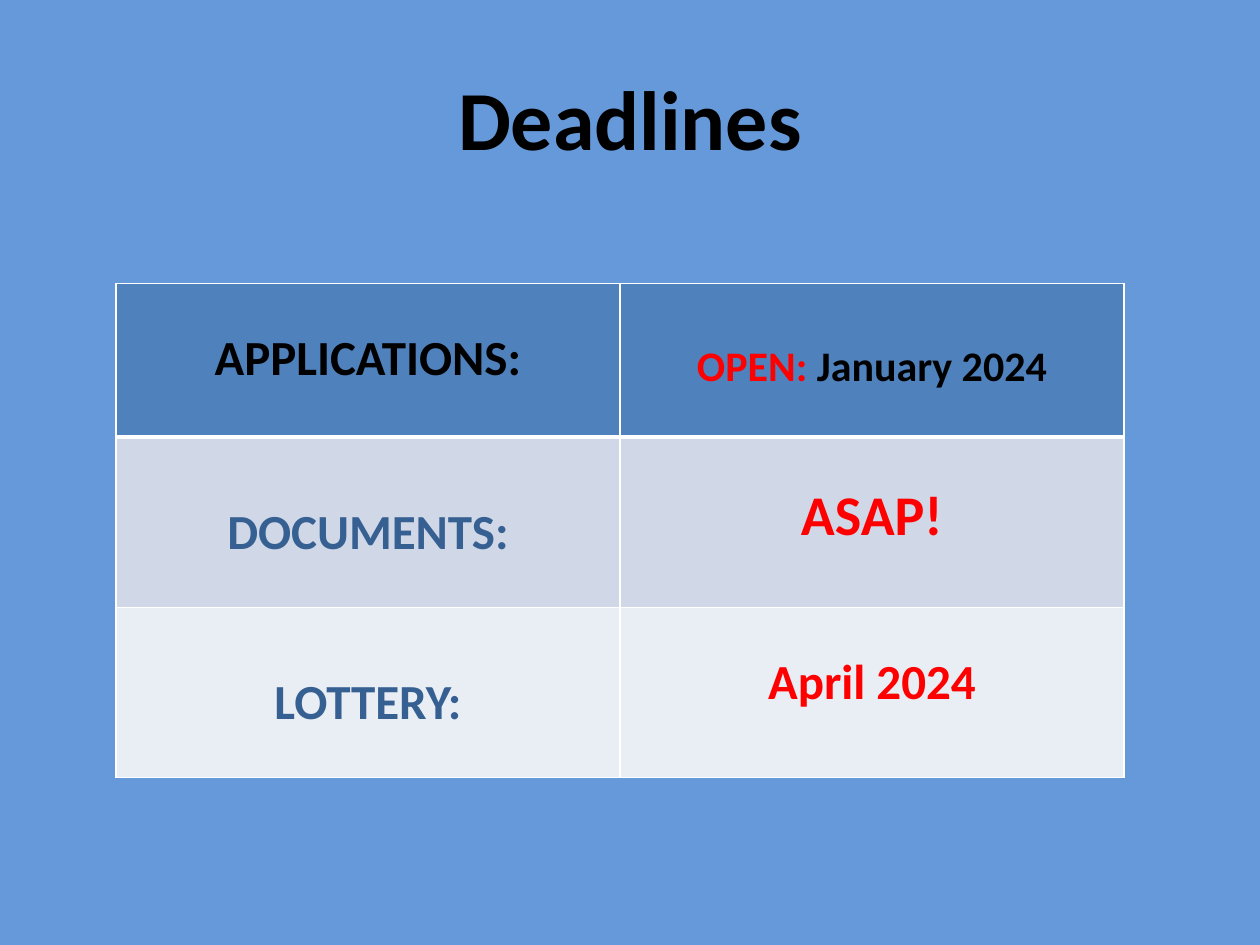
import pptx
import pptx.dml.color
import pptx.enum.text
import pptx.oxml
import pptx.oxml.ns
import pptx.util
from pptx.util import Inches

FONT = "Calibri"
BLACK, RED, NAVY, WHITE = "000000", "FF0000", "376092", "FFFFFF"
BACKGROUND = "6699D9"

TITLE = "Deadlines"
# Each cell: text spans with their colours, text size, top margin in inches
ROWS = [
    {"height": 1.22, "fill": "4F81BD", "cells": [
        ([("APPLICATIONS:", BLACK)], 28, 0.36),
        ([("OPEN: ", RED), ("January 2024", BLACK)], 24, 0.46),
    ]},
    {"height": 1.35, "fill": "D0D8E8", "cells": [
        ([("DOCUMENTS:", NAVY)], 28, 0.52),
        ([("ASAP!", RED)], 32, 0.36),
    ]},
    {"height": 1.35, "fill": "E9EDF4", "cells": [
        ([("LOTTERY:", NAVY)], 28, 0.52),
        ([("April 2024", RED)], 28, 0.36),
    ]},
]
TABLE_LEFT, TABLE_TOP, COLUMN_WIDTH = 0.92, 2.25, 4
THIN, THICK = 1, 3


def color(value):
    return pptx.dml.color.RGBColor.from_string(value)


def write(frame, spans, size, bold=True):
    """Fill the frame with one centred paragraph of (text, colour) spans."""
    para = frame.paragraphs[0]
    para.alignment = pptx.enum.text.PP_ALIGN.CENTER
    for text, value in spans:
        span = para.add_run()
        span.text = text
        span.font.name = FONT
        span.font.size = pptx.util.Pt(size)
        span.font.bold = bold
        span.font.color.rgb = color(value)


def add_borders(cell, **widths):
    """Draw white borders; the widths in points are keyed by L, R, T and B."""
    properties = cell._tc.get_or_add_tcPr()
    for side, width in widths.items():
        properties.append(pptx.oxml.parse_xml(
            f'<a:ln{side} {pptx.oxml.ns.nsdecls("a")} w="{pptx.util.Pt(width)}">'
            f'<a:solidFill><a:srgbClr val="{WHITE}"/></a:solidFill></a:ln{side}>'))


def add_title(page):
    box = page.shapes.add_textbox(Inches(0.5), Inches(0.3), Inches(9), Inches(1.25))
    box.text_frame.word_wrap = True
    box.text_frame.vertical_anchor = pptx.enum.text.MSO_ANCHOR.MIDDLE
    write(box.text_frame, [(TITLE, BLACK)], 48)


def add_deadlines(page):
    columns = len(ROWS[0]["cells"])
    height = sum(row["height"] for row in ROWS)
    table = page.shapes.add_table(
        len(ROWS), columns, Inches(TABLE_LEFT), Inches(TABLE_TOP),
        Inches(columns * COLUMN_WIDTH), Inches(height)).table
    for column in table.columns:
        column.width = Inches(COLUMN_WIDTH)
    for index, row in enumerate(ROWS):
        table.rows[index].height = Inches(row["height"])
        for position, (spans, size, margin) in enumerate(row["cells"]):
            cell = table.cell(index, position)
            cell.margin_top = Inches(margin)
            add_borders(cell, L=THIN, R=THIN,
                        T=THICK if index == 1 else THIN,
                        B=THICK if index == 0 else THIN)
            cell.fill.solid()
            cell.fill.fore_color.rgb = color(row["fill"])
            write(cell.text_frame, spans, size)


def main():
    deck = pptx.Presentation()
    deck.slide_width, deck.slide_height = Inches(10), Inches(7.5)
    page = deck.slides.add_slide(deck.slide_layouts[6])
    page.background.fill.solid()
    page.background.fill.fore_color.rgb = color(BACKGROUND)
    add_title(page)
    add_deadlines(page)
    deck.save("out.pptx")


if __name__ == "__main__":
    main()
